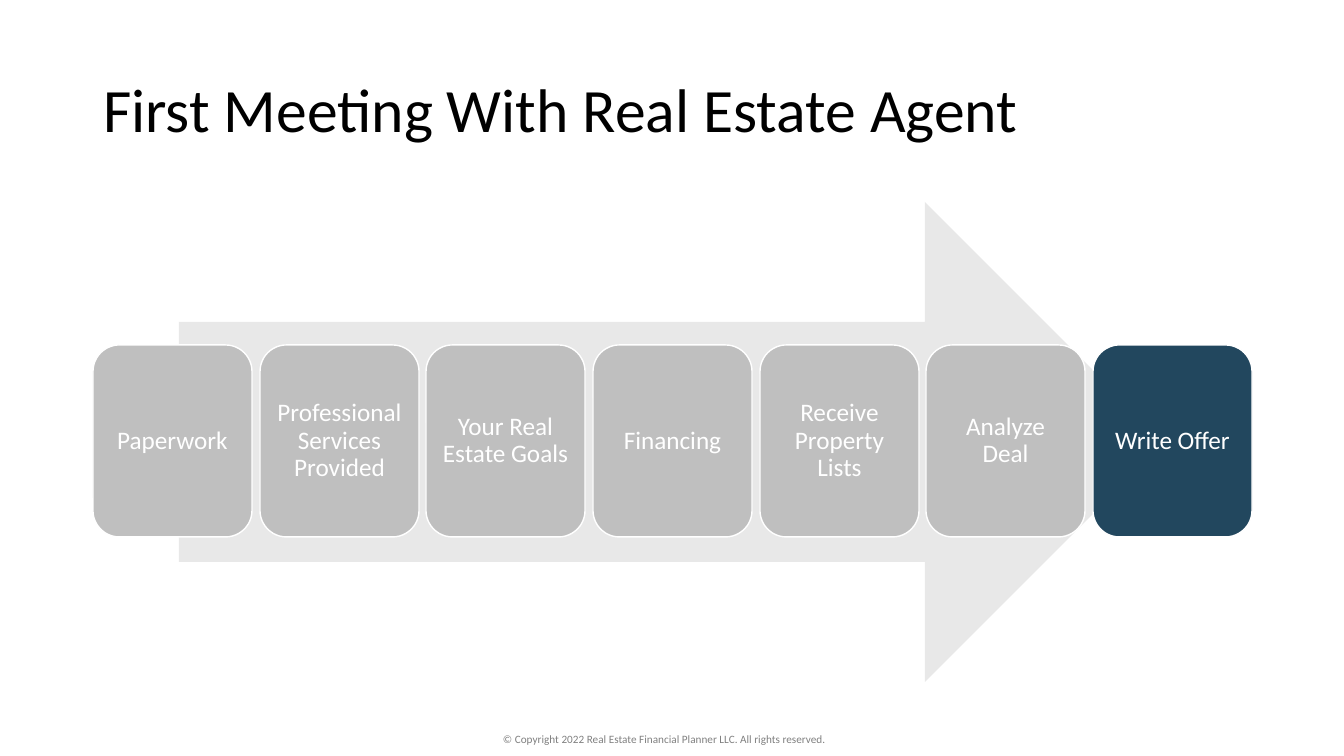
from pptx import Presentation
from pptx import util as u
from pptx.dml.color import RGBColor
from pptx.enum import shapes, text

PX = 12192000 / 1344  # EMU in one px
FONT = "Calibri"
WHITE, GREY, NAVY = "FFFFFF", "BFBFBF", "22475E"
STEPS = ["Paperwork", "Professional Services Provided", "Your Real Estate Goals",
         "Financing", "Receive Property Lists", "Analyze Deal", "Write Offer"]


def px(n):
    return u.Emu(round(n * PX))


def color(value):
    return RGBColor.from_string(value)


def put_text(tf, words, size, hue, align=text.PP_ALIGN.LEFT, spacing=None):
    tf.word_wrap = True
    p = tf.paragraphs[0]
    p.alignment = align
    p.line_spacing = spacing
    r = p.add_run()
    r.text = words
    r.font.name = FONT
    r.font.size = u.Pt(size)
    r.font.color.rgb = color(hue)


def add_title(s, words):
    title = s.shapes.title
    title.left, title.top, title.width, title.height = map(px, (93, 40, 1159, 146))
    tf = title.text_frame
    tf.auto_size = text.MSO_AUTO_SIZE.NONE
    tf.vertical_anchor = text.MSO_ANCHOR.MIDDLE
    put_text(tf, words, 44, "000000", spacing=0.9)


def add_shape(s, kind, box, fill, line=None):
    sp = s.shapes.add_shape(kind, *map(px, box))
    sp.shadow.inherit = False
    sp.fill.solid()
    sp.fill.fore_color.rgb = color(fill)
    if line:
        sp.line.color.rgb = color(line)
        sp.line.width = u.Pt(1)
    else:
        sp.line.fill.background()
    return sp


def add_step(s, left, words, fill):
    sp = add_shape(s, shapes.MSO_SHAPE.ROUNDED_RECTANGLE, (left, 345, 159, 192), fill, WHITE)
    tf = sp.text_frame
    tf.margin_left = tf.margin_right = tf.margin_top = tf.margin_bottom = px(7)
    tf.vertical_anchor = text.MSO_ANCHOR.MIDDLE
    put_text(tf, words, 18, WHITE, text.PP_ALIGN.CENTER, 0.9)


def add_footer(s, words):
    box = s.shapes.add_textbox(*map(px, (493, 727, 358, 24)))
    put_text(box.text_frame, words, 8, "808080")


def main():
    prs = Presentation()
    prs.slide_width, prs.slide_height = px(1344), px(756)
    s = prs.slides.add_slide(prs.slide_layouts[5])

    # Footer and title
    add_footer(s, "© Copyright 2022 Real Estate Financial Planner LLC. All rights reserved.")
    add_title(s, "First Meeting With Real Estate Agent")

    # Arrow behind the steps
    add_shape(s, shapes.MSO_SHAPE.RIGHT_ARROW, (179, 202, 986, 480), "E8E8E8")

    # Evenly spaced steps, the last one highlighted
    last = len(STEPS) - 1
    for i, words in enumerate(STEPS):
        add_step(s, 93 + round(i * 1000 / last), words, NAVY if i == last else GREY)

    prs.save("out.pptx")


if __name__ == "__main__":
    main()
